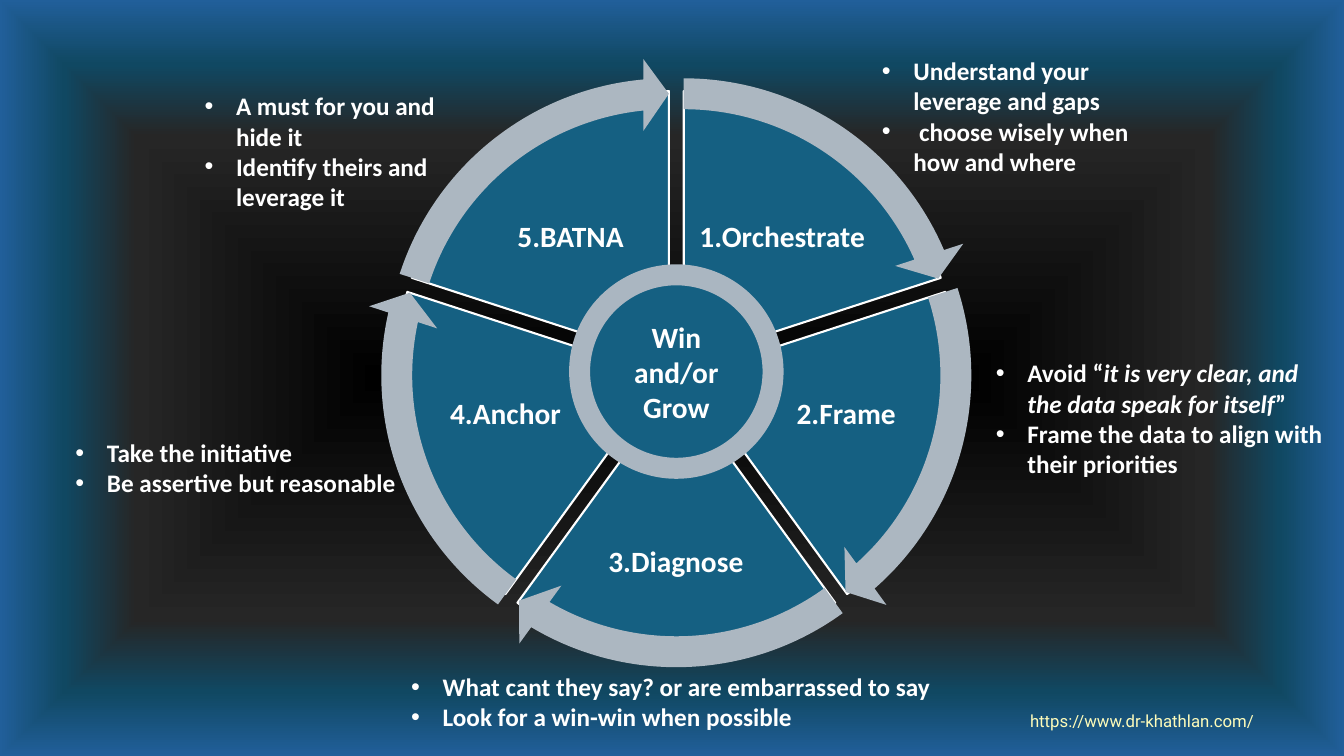
"""Build the five-step negotiation wheel slide."""
from math import cos, radians, sin
from lxml.etree import SubElement
from pptx import Presentation
from pptx.dml.color import RGBColor
from pptx.enum.shapes import MSO_SHAPE
from pptx.enum.text import MSO_ANCHOR, PP_ALIGN
from pptx.oxml import parse_xml
from pptx.oxml.ns import nsdecls, qn
from pptx.util import Pt

PIE, ARROW, OVAL = MSO_SHAPE.PIE, MSO_SHAPE.CIRCULAR_ARROW, MSO_SHAPE.OVAL
MIDDLE, CENTER = MSO_ANCHOR.MIDDLE, PP_ALIGN.CENTER

WHITE, TEAL, GREY, RIM, CREAM = "FFFFFF", "156082", "ACB7C1", "AAB6C1", "FEFCBA"
STOPS = [(0, "000000"), (64, "262626"), (83, "104862"), (100, "215F9A")]
SITE = "https://www.dr-khathlan.com/"
SITE_BOX = (683.3, 504, 265, 21.6)
HUB = "Win and/or Grow"
STEPS = [
    ("1.Orchestrate", (496.8, 128.9, 123.8, 82.8)),
    ("2.Frame", (547.2, 250.6, 114.5, 91.4)),
    ("3.Diagnose", (427.7, 352.1, 110.2, 100.8)),
    ("4.Anchor", (303.8, 250.6, 114.5, 91.4)),
    ("5.BATNA", (345.6, 128.9, 123.8, 82.8)),
]
NOTES = [
    ((622.8, 36, 207.4, 94.3),
     ["Understand your leverage and gaps", " choose wisely when how and where"]),
    ((704.2, 252, 255.6, 94.3),
     ["Avoid “*it is very clear, and the data speak for itself*”",
      "Frame the data to align with their priorities"]),
    ((286.6, 475.9, 481.7, 51.1),
     ["What cant they say? or are embarrassed to say",
      "Look for a win-win when possible"]),
    ((46.8, 308.9, 253.4, 51.1),
     ["Take the initiative", "Be assertive but reasonable"]),
    ((139, 61.2, 198, 94.3),
     ["A must for you and hide it", "Identify theirs and leverage it"]),
]
MID = (483.1, 265.4)
GAP, DISC, RING, CORE = 9, 386, 433.4, 138.2
TURN, STEP, FIRST = 216, 43.2, 162
TIP, BAND, HEAD = 3.275, 0.051, 0.059
INDENT = 22.5


def tint(code):
    return RGBColor.from_string(code)


def style(font, size, color=WHITE, name="Calibri", bold=True):
    font.size, font.name, font.bold = Pt(size), name, bold
    font.color.rgb = tint(color)


def shape(kind, mid, size, fill, line=None, width=0, adjust=()):
    box = [Pt(mid[0] - size / 2), Pt(mid[1] - size / 2), Pt(size), Pt(size)]
    item = slide.shapes.add_shape(kind, *box)
    item.shadow.inherit = False
    item.fill.solid()
    item.fill.fore_color.rgb = tint(fill)
    if line:
        item.line.color.rgb = tint(line)
        item.line.width = Pt(width)
    else:
        item.line.fill.background()
    for i, value in enumerate(adjust):
        item.adjustments[i] = value
    return item


def frame(box):
    text = slide.shapes.add_textbox(*map(Pt, box)).text_frame
    text.word_wrap = True
    return text


def label(text, words, size, *look):
    text.text = words
    para = text.paragraphs[0]
    para.alignment = CENTER
    style(para.runs[0].font, size, *look)
    return para


def bullets(box, lines):
    text = frame(box)
    for i, line in enumerate(lines):
        para = text.add_paragraph() if i else text.paragraphs[0]
        props = para._p.get_or_add_pPr()
        props.set("marL", str(Pt(INDENT)))
        props.set("indent", str(-Pt(INDENT)))
        SubElement(props, qn("a:buFont"), typeface="Arial")
        SubElement(props, qn("a:buChar"), char="•")
        for j, part in enumerate(line.split("*")):
            run = para.add_run()
            run.text = part
            style(run.font, 18)
            run.font.italic = j % 2 == 1


def backdrop():
    stops = "".join(
        f'<a:gs pos="{at * 1000}"><a:srgbClr val="{code}"/></a:gs>' for at, code in STOPS)
    slide.element.cSld.insert(0, parse_xml(
        f'<p:bg {nsdecls("p", "a")}><p:bgPr><a:gradFill rotWithShape="1">'
        f'<a:gsLst>{stops}</a:gsLst><a:path path="shape">'
        '<a:fillToRect l="50000" t="50000" r="50000" b="50000"/></a:path>'
        '</a:gradFill><a:effectLst/></p:bgPr></p:bg>'))


deck = Presentation()
deck.slide_width, deck.slide_height = Pt(960), Pt(540)
slide = deck.slides.add_slide(deck.slide_layouts[6])
backdrop()
label(frame(SITE_BOX), SITE, 12, CREAM, "Roboto", False)

wheel = []
for i, (name, box) in enumerate(STEPS):
    start = (FIRST + i * STEP) % TURN
    end = (start + STEP) % TURN
    angle = radians((start + STEP / 2) / 0.6)
    spot = (MID[0] + GAP * cos(angle), MID[1] + GAP * sin(angle))
    wheel.append((spot, start, end))
    shape(PIE, spot, DISC, TEAL, WHITE, 1.5, (start, end))
    text = frame(box)
    text.vertical_anchor = MIDDLE
    text.margin_left = text.margin_right = Pt(2)
    text.margin_top = text.margin_bottom = Pt(2)
    label(text, name, 21).line_spacing = 0.9

for spot, start, end in wheel:
    shape(ARROW, spot, RING, GREY, adjust=(BAND, TIP, end - TIP, start, HEAD))

for box, lines in NOTES:
    bullets(box, lines)

hub = shape(OVAL, MID, CORE, TEAL, RIM, 15).text_frame
hub.word_wrap = True
hub.vertical_anchor = MIDDLE
label(hub, HUB, 21)
deck.save("out.pptx")
